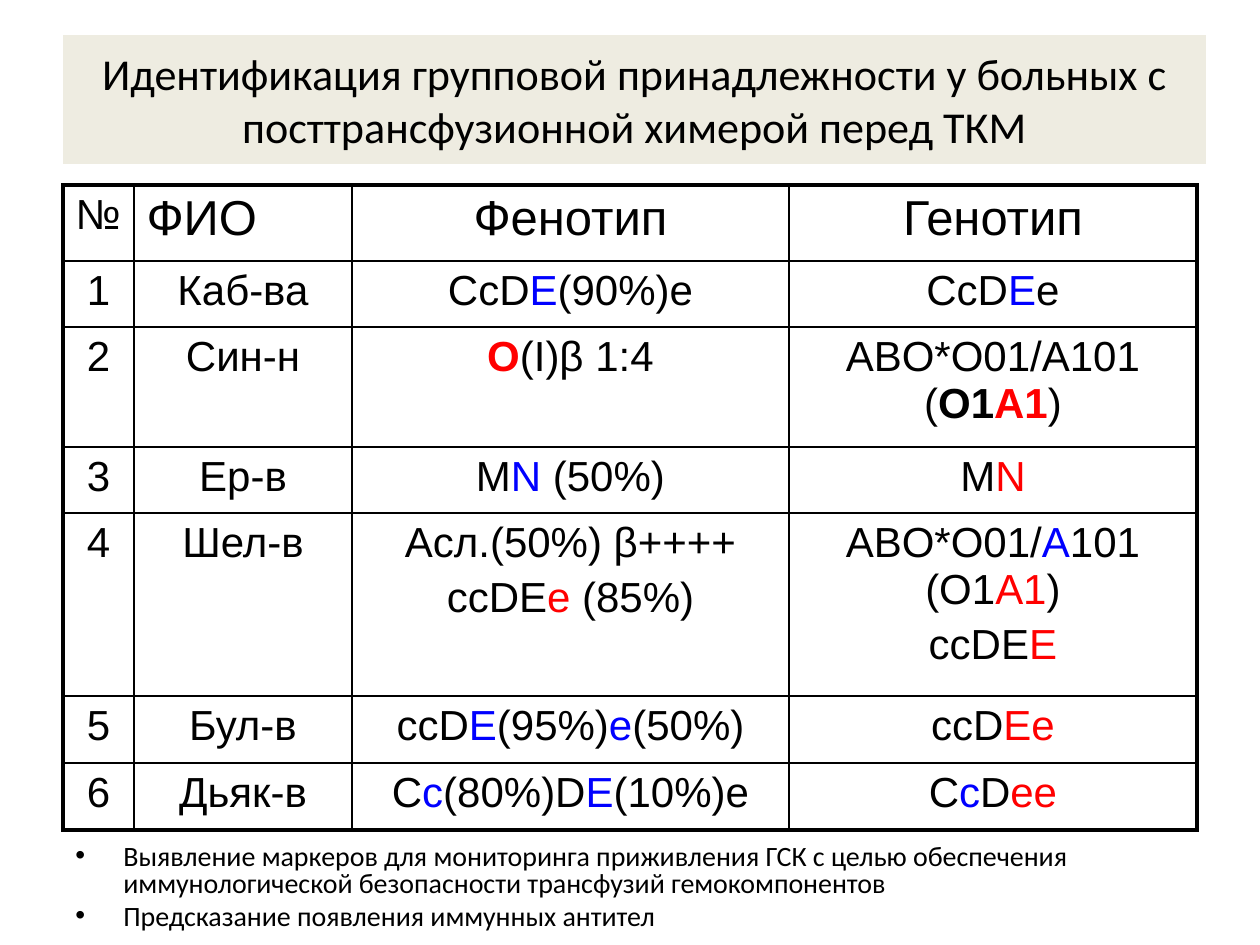
from lxml.etree import SubElement
from pptx import Presentation
from pptx.dml.color import RGBColor
from pptx.enum.text import MSO_ANCHOR as Anchor, MSO_AUTO_SIZE as AutoSize, PP_ALIGN as Align
from pptx.oxml.ns import qn
from pptx.util import Emu, Pt

EMU_PER_PX = 914400 / 126


def px(length):
    return Emu(round(length * EMU_PER_PX))


def color(hex_string):
    return RGBColor.from_string(hex_string)


class SlideBuilder:
    BLACK, BLUE, RED, BEIGE = "000000", "0000FF", "FF0000", "EEECE1"
    # Marked pieces of text: key -> (colour, bold)
    MARKS = {"b": (BLUE, False), "r": (RED, False),
             "R": (RED, True), "K": (BLACK, True)}
    HEADING_FONT, TABLE_FONT = "Calibri", "Arial"
    THIN, THICK = 1, 2.25

    def __init__(self, presentation):
        self.slide = presentation.slides.add_slide(presentation.slide_layouts[5])

    def format_font(self, font, name, size, hex_string=BLACK, bold=False):
        font.name, font.size, font.bold = name, Pt(size), bold
        font.color.rgb = color(hex_string)

    def place(self, shape, box):
        shape.left, shape.top, shape.width, shape.height = map(px, box)

    def title(self, text, box, size):
        shape = self.slide.shapes.title
        self.place(shape, box)
        shape.fill.solid()
        shape.fill.fore_color.rgb = color(self.BEIGE)
        frame = shape.text_frame
        frame.text = text
        frame.word_wrap, frame.auto_size = True, AutoSize.NONE
        frame.vertical_anchor = Anchor.MIDDLE
        paragraph = frame.paragraphs[0]
        paragraph.alignment = Align.CENTER
        self.format_font(paragraph.runs[0].font, self.HEADING_FONT, size)

    def marked_text(self, paragraph, text, size):
        """Every second piece between bars is 'key:text', styled by MARKS."""
        for index, piece in enumerate(text.split("|")):
            style = (self.BLACK, False)
            if index % 2:
                key, _, piece = piece.partition(":")
                style = self.MARKS[key]
            if piece:
                run = paragraph.add_run()
                run.text = piece
                self.format_font(run.font, self.TABLE_FONT, size, *style)

    def borders(self, cell, widths):
        properties = cell._tc.get_or_add_tcPr()
        for side, width in zip("LRTB", widths):
            line = SubElement(properties, qn(f"a:ln{side}"), w=str(Pt(width)))
            fill = SubElement(line, qn("a:solidFill"))
            SubElement(fill, qn("a:srgbClr"), val=self.BLACK)

    def cell(self, cell, text, size, alignment, widths):
        self.borders(cell, widths)
        cell.fill.background()
        frame = cell.text_frame
        for index, line in enumerate(text.split("\n")):
            paragraph = frame.add_paragraph() if index else frame.paragraphs[0]
            paragraph.alignment = alignment
            if index:
                paragraph.space_before = Pt(0.2 * size)
            self.marked_text(paragraph, line, size)

    def table(self, rows, left, top, column_widths, row_heights):
        last_row, last_column = len(row_heights) - 1, len(column_widths) - 1
        table = self.slide.shapes.add_table(
            len(row_heights), len(column_widths), px(left), px(top),
            px(sum(column_widths)), px(sum(row_heights))).table
        table.first_row = table.horz_banding = False
        for column, width in zip(table.columns, column_widths):
            column.width = px(width)
        for row, height in zip(table.rows, row_heights):
            row.height = px(height)
        for r, row in enumerate(rows):
            for c, text in enumerate(row):
                outer = (c == 0, c == last_column, r == 0, r == last_row)
                widths = [self.THICK if edge else self.THIN for edge in outer]
                size = 28 if r == 0 and c > 0 else 24
                alignment = Align.LEFT if r == 0 and c < 2 else Align.CENTER
                self.cell(table.cell(r, c), text, size, alignment, widths)

    def bullets(self, lines, box, size, indent):
        frame = self.slide.shapes.add_textbox(*map(px, box)).text_frame
        frame.word_wrap = True
        frame.text = "\n".join(lines)
        for index, paragraph in enumerate(frame.paragraphs):
            properties = paragraph._p.get_or_add_pPr()
            properties.set("marL", str(px(indent)))
            properties.set("indent", str(-px(indent)))
            paragraph.line_spacing = 0.8
            if index:
                paragraph.space_before = Pt(0.2 * size)
            SubElement(properties, qn("a:buFont"), typeface="Arial")
            SubElement(properties, qn("a:buChar"), char="•")
            self.format_font(paragraph.runs[0].font, self.HEADING_FONT, size)


ROWS = [
    ("№", "ФИО", "Фенотип", "Генотип"),
    ("1", "Каб-ва", "CcD|b:E|(90%)e", "CcD|b:E|e"),
    ("2", "Син-н", "|R:О|(I)β 1:4", "ABO*O01/A101 (|K:O1||R:A1|)"),
    ("3", "Ер-в", "M|b:N| (50%)", "M|r:N|"),
    ("4", "Шел-в", "Aсл.(50%) β++++\nccDE|r:e| (85%)",
     "ABO*O01/|b:A|101 (O1|r:A1|)\nccDE|r:E|"),
    ("5", "Бул-в", "ccD|b:E|(95%)|b:e|(50%)", "ccD|r:Ee|"),
    ("6", "Дьяк-в", "C|b:c|(80%)D|b:E|(10%)e", "C|b:c|D|r:ee|"),
]
CONCLUSIONS = [
    "Выявление маркеров для мониторинга приживления ГСК с целью обеспечения "
    "иммунологической безопасности трансфузий гемокомпонентов",
    "Предсказание появления иммунных антител",
]


def main():
    presentation = Presentation()
    presentation.slide_width, presentation.slide_height = px(1260), px(945)
    builder = SlideBuilder(presentation)

    # Heading
    builder.title("Идентификация групповой принадлежности у больных с "
                  "посттрансфузионной химерой перед ТКМ", (63, 35, 1143, 129), 25.2)
    # Phenotype and genotype of each patient
    builder.table(ROWS, 63, 185, (71, 218, 437, 408), (76, 66, 120, 66, 183, 67, 67))
    # Conclusions
    builder.bullets(CONCLUSIONS, (63, 839, 1134, 106), 16, 48)

    presentation.save("out.pptx")


if __name__ == "__main__":
    main()
